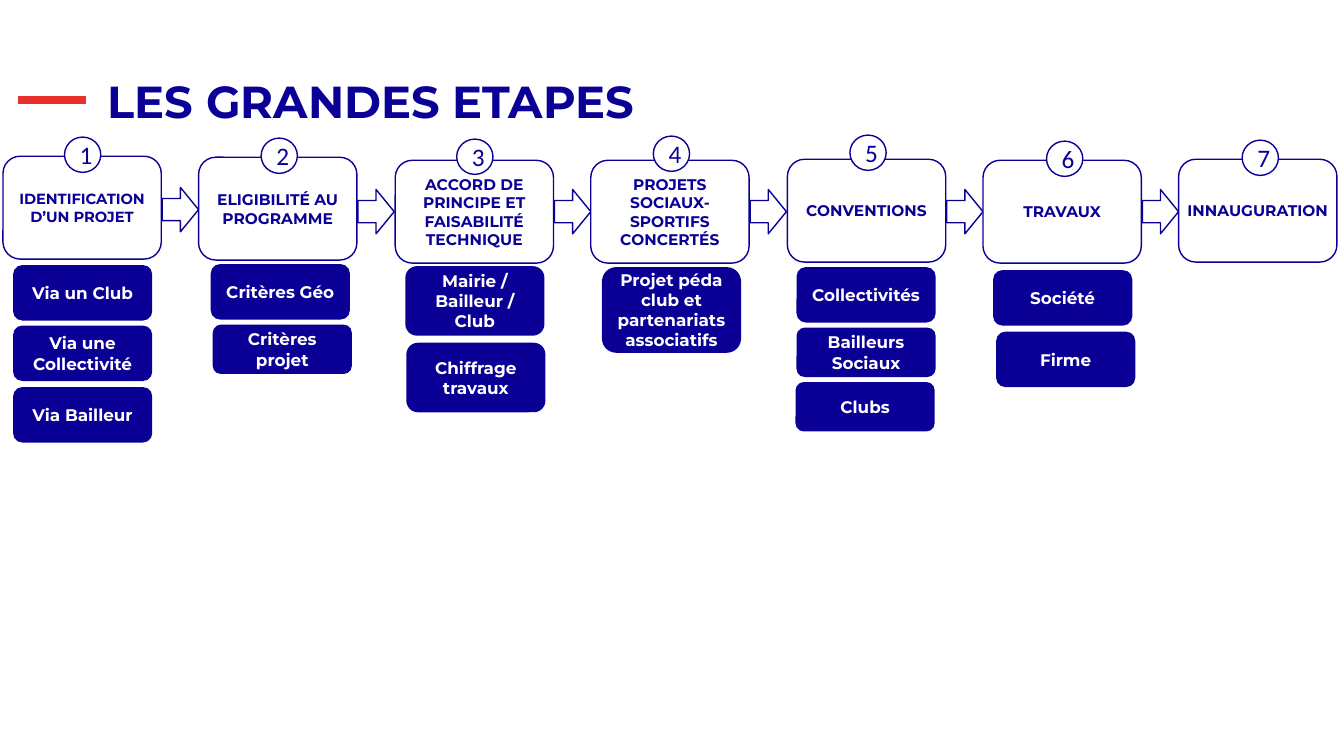
"""Build the slide of the seven main project steps."""
from dataclasses import dataclass
from typing import Any, NamedTuple

from lxml.etree import SubElement
from pptx import Presentation
from pptx.dml.color import RGBColor
from pptx.enum.shapes import MSO_CONNECTOR, MSO_SHAPE
from pptx.enum.text import MSO_ANCHOR, PP_ALIGN
from pptx.oxml.ns import qn
from pptx.util import Pt

SCALE = 9144


@dataclass(frozen=True)
class Theme:
    """Colours, fonts and type sizes."""
    navy: RGBColor = RGBColor(0x0A, 0x00, 0x96)
    red: RGBColor = RGBColor(0xE7, 0x30, 0x2A)
    white: RGBColor = RGBColor(0xFF, 0xFF, 0xFF)
    font: str = "Montserrat"
    digit: str = "Calibri"
    title: float = 32
    step: float = 11
    small: float = 10.5
    tag: float = 12
    number: float = 18


class Box(NamedTuple):
    """A place on the slide in px."""
    left: int
    top: int
    width: int
    height: int


class Tag(NamedTuple):
    """A filled label under a step."""
    text: str
    left: int
    top: int
    height: int


class Step(NamedTuple):
    """A step with the tops of its frame and its number."""
    text: str
    top: int
    disc: int
    tags: tuple[Tag, ...] = ()
    size: float = Theme.step
    inset: int = 10


STEPS = (
    Step("IDENTIFICATION D’UN PROJET", 155, 136, (
        Tag("Via un Club", 13, 263, 55),
        Tag("Via une Collectivité", 13, 323, 55),
        Tag("Via Bailleur", 13, 384, 55)), Theme.small),
    Step("ELIGIBILITÉ AU PROGRAMME", 156, 137, (
        Tag("Critères Géo", 209, 262, 55),
        Tag("Critères projet", 211, 322, 49))),
    Step("ACCORD DE PRINCIPE ET FAISABILITÉ TECHNIQUE", 159, 138, (
        Tag("Mairie / Bailleur / Club", 402, 264, 69),
        Tag("Chiffrage travaux", 403, 340, 69))),
    Step("PROJETS SOCIAUX-SPORTIFS CONCERTÉS", 159, 135, (
        Tag("Projet péda club et partenariats associatifs", 597, 265, 85),)),
    Step("CONVENTIONS", 158, 134, (
        Tag("Collectivités", 790, 265, 55),
        Tag("Bailleurs Sociaux", 790, 325, 49),
        Tag("Clubs", 789, 379, 49))),
    Step("TRAVAUX", 159, 140, (
        Tag("Société", 985, 268, 55),
        Tag("Firme", 988, 329, 55))),
    Step("INNAUGURATION", 158, 139, inset=0),
)


def px(count: int) -> int:
    """Turn px into EMU."""
    return count * SCALE


def apply(target: Any, values: dict[str, Any]) -> None:
    """Set each attribute named in the values."""
    for name, value in values.items():
        setattr(target, name, value)


def draw(slide: Any, kind: MSO_SHAPE, box: Box, fill: RGBColor | None, line: RGBColor | None) -> Any:
    """Add a flat shape."""
    shape = slide.shapes.add_shape(kind, *map(px, box))
    shape.shadow.inherit = False
    for paint, tone in ((shape.fill, fill), (shape.line.fill, line)):
        if tone is None:
            paint.background()
        else:
            paint.solid()
            paint.fore_color.rgb = tone
    if line is not None:
        shape.line.width = Pt(1)
    return shape


def write(shape: Any, text: str, font: str, size: float, tone: RGBColor, bold: bool = True,
          inset: int = 10, rim: int = 5, anchor: MSO_ANCHOR = MSO_ANCHOR.MIDDLE,
          align: PP_ALIGN = PP_ALIGN.CENTER, space: float = 1.0) -> None:
    """Fill a shape with one styled paragraph."""
    frame = shape.text_frame
    apply(frame, {"word_wrap": True, "vertical_anchor": anchor,
                  "margin_left": px(inset), "margin_right": px(inset),
                  "margin_top": px(rim), "margin_bottom": px(rim)})
    para = frame.paragraphs[0]
    apply(para, {"alignment": align, "line_spacing": space})
    run = para.add_run()
    run.text = text
    apply(run.font, {"name": font, "size": Pt(size), "bold": bold})
    run.font.color.rgb = tone


def head(slide: Any, theme: Theme) -> None:
    """Draw the red dash and the title."""
    dash = slide.shapes.add_connector(MSO_CONNECTOR.STRAIGHT, px(18), px(99), px(85), px(99))
    dash.line.color.rgb = theme.red
    dash.line.width = Pt(6)
    SubElement(dash._element.spPr, qn("a:effectLst"))
    title = slide.shapes.add_textbox(*map(px, Box(107, 69, 1084, 58)))
    write(title, "LES GRANDES ETAPES", theme.font, theme.title, theme.navy, inset=0, rim=0,
          anchor=MSO_ANCHOR.BOTTOM, align=PP_ALIGN.LEFT, space=0.9)


def stage(slide: Any, theme: Theme, index: int, step: Step) -> None:
    """Draw one step with its number, arrow and tags."""
    left = 3 + round(194.4 * index)
    frame = draw(slide, MSO_SHAPE.ROUNDED_RECTANGLE, Box(left, step.top, 157, 102),
                 theme.white, theme.navy)
    write(frame, step.text, theme.font, step.size, theme.navy, inset=step.inset)
    disc = draw(slide, MSO_SHAPE.OVAL, Box(64 + round(194.7 * index), step.disc, 36, 35),
                theme.white, theme.navy)
    write(disc, str(index + 1), theme.digit, theme.number, theme.navy, bold=False)
    if index < len(STEPS) - 1:
        draw(slide, MSO_SHAPE.RIGHT_ARROW, Box(left + 158, 188 if index else 186, 36, 44),
             None, theme.navy)
    for tag in step.tags:
        label = draw(slide, MSO_SHAPE.ROUNDED_RECTANGLE,
                     Box(tag.left, tag.top, 138, tag.height), theme.navy, None)
        write(label, tag.text, theme.font, theme.tag, theme.white)


def main() -> None:
    """Build and save the deck."""
    deck = Presentation()
    apply(deck, {"slide_width": px(1333), "slide_height": px(750)})
    slide = deck.slides.add_slide(deck.slide_layouts[6])
    theme = Theme()
    head(slide, theme)
    for index, step in enumerate(STEPS):
        stage(slide, theme, index, step)
    deck.save("out.pptx")


if __name__ == "__main__":
    main()
